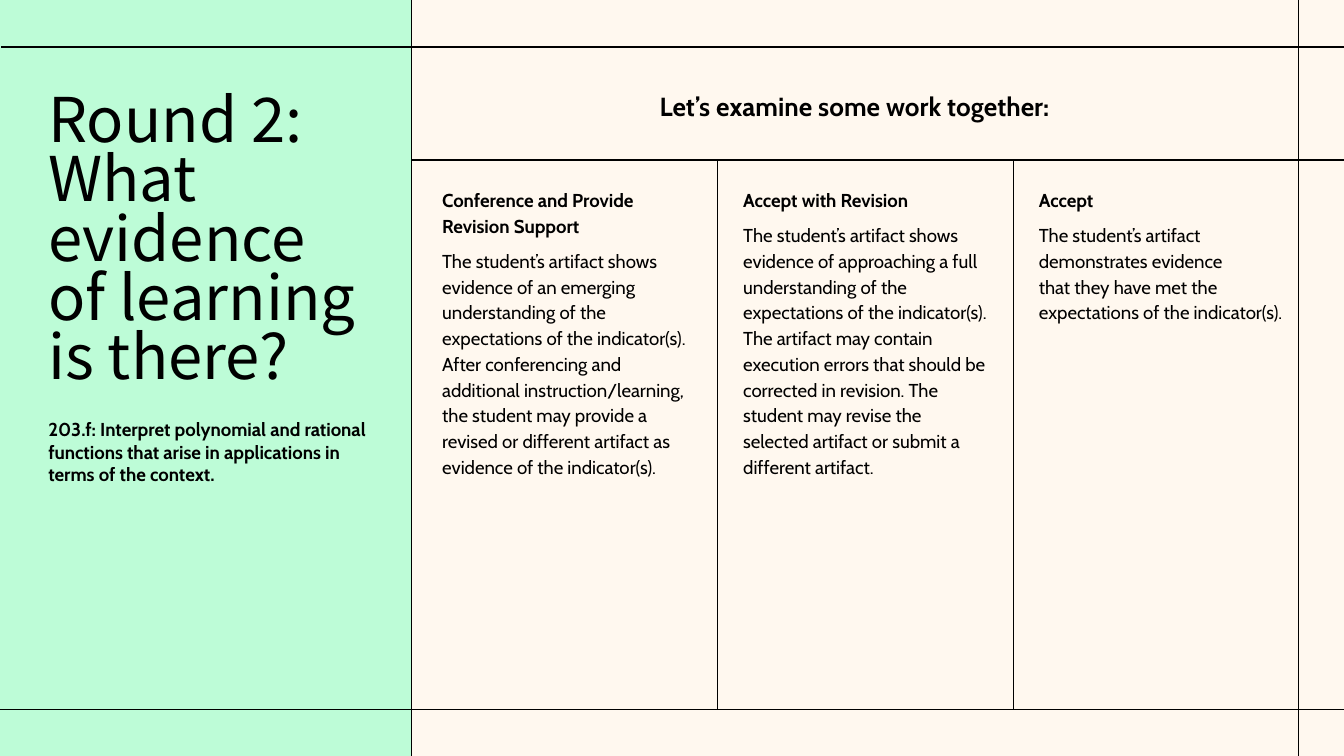
from lxml import etree
from pptx import Presentation
from pptx.dml.color import RGBColor
from pptx.enum.shapes import MSO_CONNECTOR, MSO_SHAPE
from pptx.enum.text import MSO_ANCHOR, MSO_AUTO_SIZE, PP_ALIGN
from pptx.oxml.ns import qn
from pptx.util import Inches, Pt

STRAIGHT = MSO_CONNECTOR.STRAIGHT
RECTANGLE = MSO_SHAPE.RECTANGLE
TOP = MSO_ANCHOR.TOP
NO_FIT = MSO_AUTO_SIZE.NONE
LEFT, CENTER = PP_ALIGN.LEFT, PP_ALIGN.CENTER

COLORS = {"cream": "FFF8EF", "mint": "BDFCD7", "ink": "000000"}
INK = RGBColor.from_string(COLORS["ink"])
HEADING_FONT, BODY_FONT = "Noto Sans CJK KR", "Cabin"

HEADER_Y, FOOTER_Y = 1.19, 5.28
PANEL_WIDTH = 3.06
COLUMN_WIDTH = 1.82

prs = Presentation()
prs.slide_width, prs.slide_height = Inches(10), Inches(10 * 9 / 16)
slide = prs.slides.add_slide(prs.slide_layouts[5])
slide.background.fill.solid()
slide.background.fill.fore_color.rgb = RGBColor.from_string(COLORS["cream"])


def add_rule(x1, y1, x2, y2):
    rule = slide.shapes.add_connector(
        STRAIGHT, Inches(x1), Inches(y1), Inches(x2), Inches(y2))
    rule.line.color.rgb = INK
    rule.line.width = Pt(0.75)
    etree.SubElement(rule.element.spPr, qn("a:effectLst"))


def fill_text(shape, box, paragraphs, size, font=BODY_FONT, align=LEFT, spacing=1.0):
    """Place a shape and write (text, bold) paragraphs into it without insets."""
    shape.left, shape.top, shape.width, shape.height = map(Inches, box)
    frame = shape.text_frame
    frame.word_wrap = True
    frame.auto_size = NO_FIT
    frame.vertical_anchor = TOP
    frame.margin_left = frame.margin_top = frame.margin_right = frame.margin_bottom = 0
    for i, (text, bold) in enumerate(paragraphs):
        paragraph = frame.add_paragraph() if i else frame.paragraphs[0]
        paragraph.text = text
        paragraph.alignment = align
        paragraph.line_spacing = spacing
        paragraph.font.name = font
        paragraph.font.size = Pt(size)
        paragraph.font.bold = bold
        paragraph.font.color.rgb = INK
    return frame


# The panel covers the left end of the header rule, and the title sits on the panel.
add_rule(0.01, HEADER_Y, 10.02, HEADER_Y)
panel = slide.shapes.add_shape(RECTANGLE, 0, 0, Inches(PANEL_WIDTH), prs.slide_height)
panel.shadow.inherit = False
panel.fill.solid()
panel.fill.fore_color.rgb = RGBColor.from_string(COLORS["mint"])
panel.line.fill.background()

for x, y in ((0.01, 0.35), (-0.02, FOOTER_Y)):
    add_rule(x, y, 10.02, y)
for x in (PANEL_WIDTH, 9.66):
    add_rule(x, -0.01, x, 5.63)
for x in (5.34, 7.54):
    add_rule(x, HEADER_Y, x, FOOTER_Y)

title = slide.shapes.title
panel.element.addnext(title.element)
fill_text(title, (0.36, 0.71, 2.37, 2.22),
          [("Round 2:", False), ("What evidence of learning is there?", False)],
          33, font=HEADING_FONT, spacing=0.8)

indicator = slide.shapes.add_textbox(0, 0, 0, 0)
fill_text(indicator, (0.36, 3.11, 2.37, 0.67),
          [("203.f: Interpret polynomial and rational functions that arise in "
            "applications in terms of the context.", True)], 10)

prompt = slide.shapes.add_textbox(0, 0, 0, 0)
fill_text(prompt, (3.41, 0.67, 5.9, 0.24),
          [("Let’s examine some work together:", True)], 14, align=CENTER)

ratings = [
    (3.29, 2.56, "Conference and Provide Revision Support",
     "The student’s artifact shows evidence of an emerging understanding of the "
     "expectations of the indicator(s). After conferencing and additional "
     "instruction/learning, the student may provide a revised or different "
     "artifact as evidence of the indicator(s)."),
    (5.53, 2.37, "Accept with Revision",
     "The student’s artifact shows evidence of approaching a full understanding "
     "of the expectations of the indicator(s). The artifact may contain execution "
     "errors that should be corrected in revision. The student may revise the "
     "selected artifact or submit a different artifact."),
    (7.73, 1.21, "Accept",
     "The student’s artifact demonstrates evidence \nthat they have met the "
     "expectations of the indicator(s)."),
]
for x, height, rating, description in ratings:
    column = slide.shapes.add_textbox(0, 0, 0, 0)
    frame = fill_text(column, (x, 1.38, COLUMN_WIDTH, height),
                      [(rating, True), (description, False)], 10, spacing=1.15)
    frame.paragraphs[1].space_before = frame.paragraphs[1].space_after = Pt(5)

prs.save("out.pptx")
